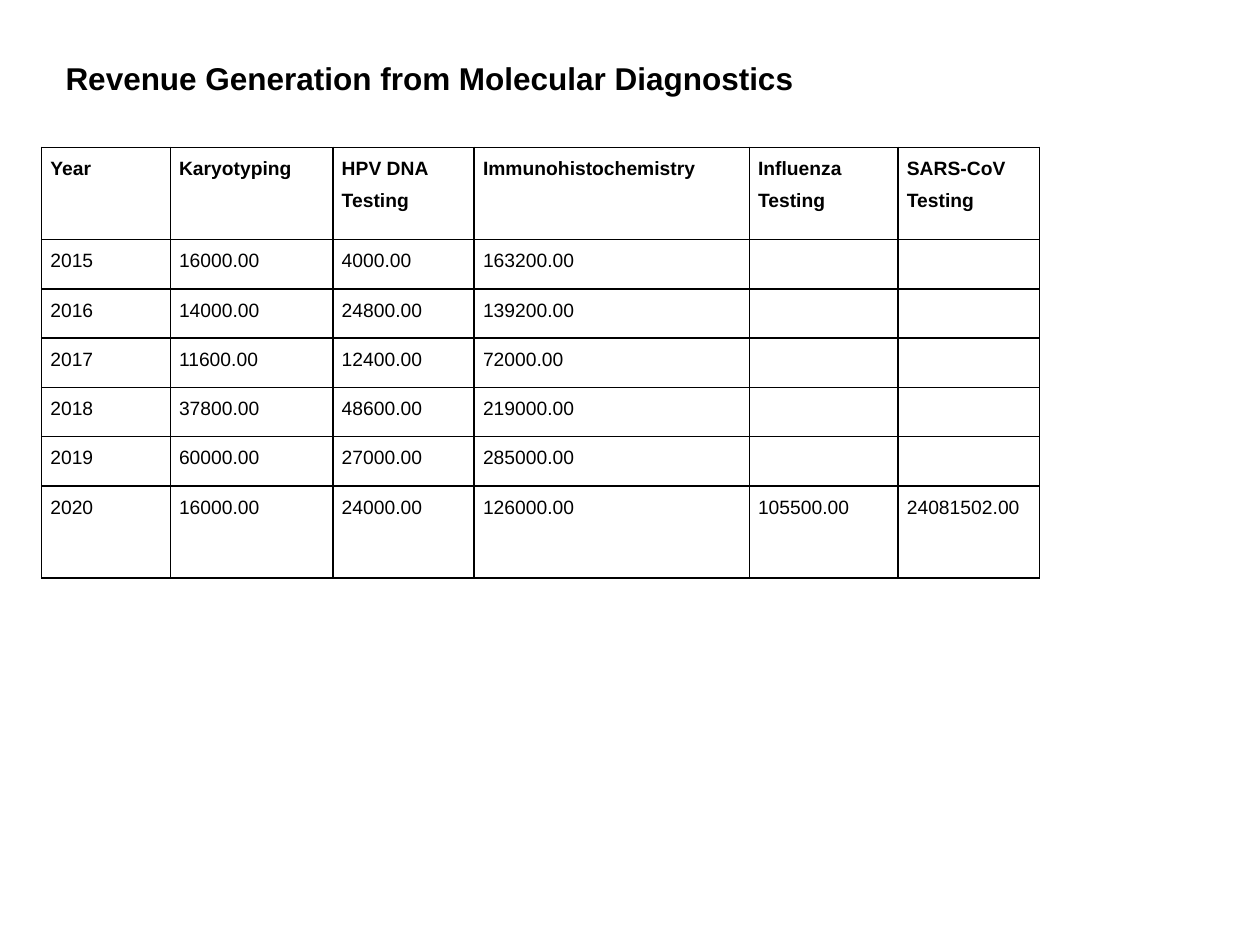
from lxml import etree
from pptx import Presentation
from pptx.dml.color import RGBColor
from pptx.enum import text
from pptx.oxml import ns
from pptx.util import Inches, Pt

BLACK = RGBColor(0, 0, 0)
BORDER_WIDTH = Pt(1)

TITLE = "Revenue Generation from Molecular Diagnostics"
TITLE_FONT = {"name": "Arial", "size": Pt(18), "bold": True}
HEADER_FONT = {"name": "Arial", "size": Pt(11), "bold": True}
BODY_FONT = {**HEADER_FONT, "bold": False}
CELL_FORMAT = {
    "margin_left": Inches(0.07), "margin_right": Inches(0.07),
    "margin_top": 0, "margin_bottom": 0,
    "vertical_anchor": text.MSO_ANCHOR.TOP,
}

COLUMN_WIDTHS = [1.02, 1.29, 1.12, 2.18, 1.18, 1.12]
ROW_HEIGHTS = [0.73] + [0.39] * 5 + [0.73]
REVENUE = [
    ["Year", "Karyotyping", "HPV DNA Testing", "Immunohistochemistry",
     "Influenza Testing", "SARS-CoV Testing"],
    ["2015", "16000.00", "4000.00", "163200.00", "", ""],
    ["2016", "14000.00", "24800.00", "139200.00", "", ""],
    ["2017", "11600.00", "12400.00", "72000.00", "", ""],
    ["2018", "37800.00", "48600.00", "219000.00", "", ""],
    ["2019", "60000.00", "27000.00", "285000.00", "", ""],
    ["2020", "16000.00", "24000.00", "126000.00", "105500.00", "24081502.00"],
]


def apply(obj, values):
    for name, value in values.items():
        setattr(obj, name, value)


def write(p, content, font):
    r = p.add_run()
    r.text = content
    apply(r.font, font)
    r.font.color.rgb = BLACK


def add_borders(cell):
    tc_pr = cell._tc.get_or_add_tcPr()
    for side in ("lnL", "lnR", "lnT", "lnB"):
        ln = etree.SubElement(tc_pr, ns.qn(f"a:{side}"), w=str(BORDER_WIDTH))
        fill = etree.SubElement(ln, ns.qn("a:solidFill"))
        etree.SubElement(fill, ns.qn("a:srgbClr"), val=str(BLACK))


def fill_cell(cell, content, font):
    apply(cell, CELL_FORMAT)
    add_borders(cell)
    cell.fill.background()
    p = cell.text_frame.paragraphs[0]
    p.line_spacing = 1.5
    if content:
        write(p, content, font)
    else:
        apply(p.font, font)


def add_title(s, left, top, width, height):
    sp = s.shapes.title
    apply(sp, {"left": left, "top": top, "width": width, "height": height})
    tf = sp.text_frame
    apply(tf, {"word_wrap": True, "vertical_anchor": text.MSO_ANCHOR.TOP,
               "auto_size": text.MSO_AUTO_SIZE.NONE})
    p = tf.paragraphs[0]
    p.alignment = text.PP_ALIGN.LEFT
    write(p, TITLE, TITLE_FONT)


def add_revenue_table(s, left, top, width, height):
    table = s.shapes.add_table(len(ROW_HEIGHTS), len(COLUMN_WIDTHS),
                               left, top, width, height).table
    apply(table, {"first_row": False, "horz_banding": False})
    for column, share in zip(table.columns, COLUMN_WIDTHS):
        column.width = int(width * share / sum(COLUMN_WIDTHS))
    for row, share in zip(table.rows, ROW_HEIGHTS):
        row.height = int(height * share / sum(ROW_HEIGHTS))
    for i, values in enumerate(REVENUE):
        font = BODY_FONT if i else HEADER_FONT
        for cell, content in zip(table.rows[i].cells, values):
            fill_cell(cell, content, font)


def main():
    prs = Presentation()
    apply(prs, {"slide_width": Inches(10), "slide_height": Inches(7.5)})
    s = prs.slides.add_slide(prs.slide_layouts[5])
    add_revenue_table(s, Inches(0.33), Inches(1.17), Inches(7.92), Inches(3.42))
    add_title(s, Inches(0.42), Inches(0.42), Inches(6.42), Inches(0.71))
    prs.save("out.pptx")


if __name__ == "__main__":
    main()
